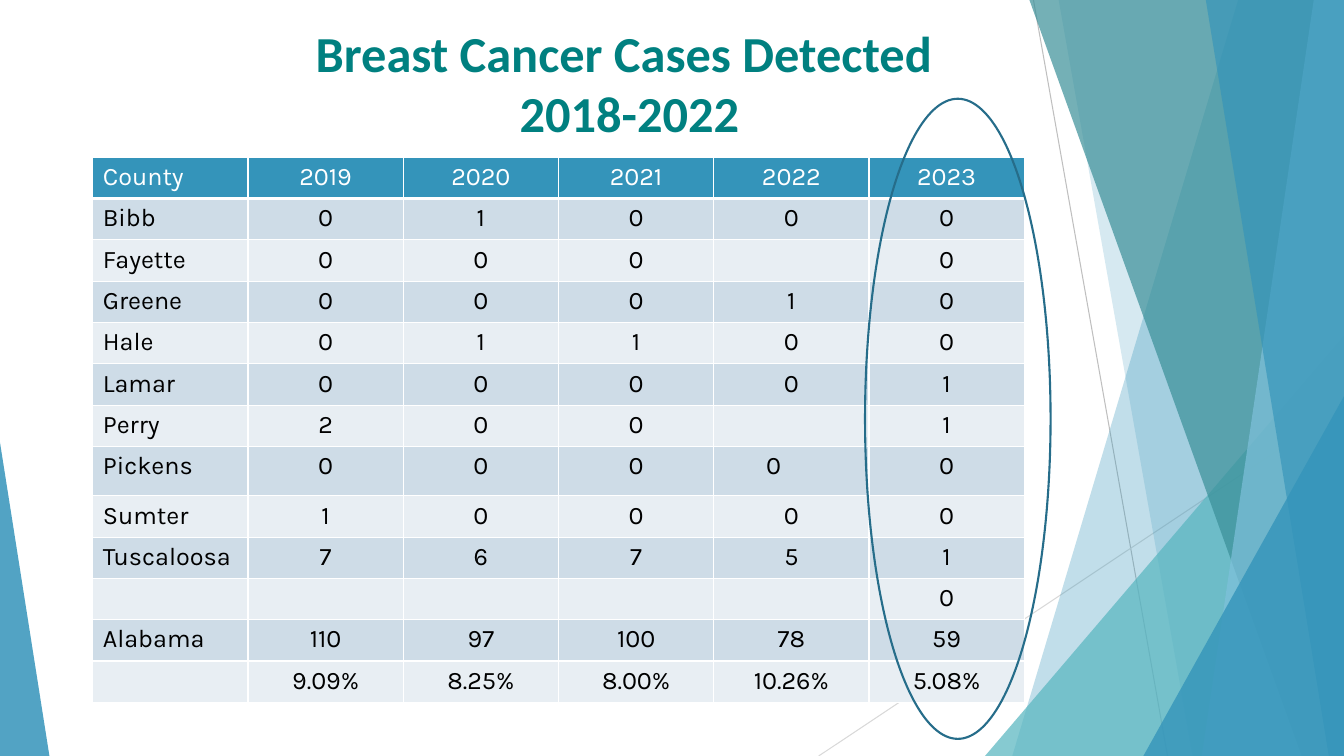
import lxml.etree
import pptx
import pptx.dml.color
import pptx.enum.shapes
import pptx.enum.text
import pptx.oxml.ns
import pptx.util

Inches = pptx.util.Inches
Pt = pptx.util.Pt
SHAPE = pptx.enum.shapes.MSO_SHAPE
ALIGN = pptx.enum.text.PP_ALIGN

THEME = {
    "title": {"name": "Calibri", "size": Pt(36), "bold": True, "color": "008080"},
    "header": {"name": "Karla", "size": Pt(18), "bold": False, "color": "FFFFFF"},
    "body": {"name": "Karla", "size": Pt(18), "bold": False, "color": "000000"},
    "header_fill": "3494BA",
    "bands": ("CEDCE7", "E8EEF3"),
    "grid": "FFFFFF",
    "ring": "266D8A",
}

TITLE = "Breast Cancer Cases Detected \n2018-2022"
CASES = [
    ("County", "2019", "2020", "2021", "2022", "2023"),
    ("Bibb", "0", "1", "0", "0", "0"),
    ("Fayette", "0", "0", "0", "", "0"),
    ("Greene", "0", "0", "0", "1", "0"),
    ("Hale", "0", "1", "1", "0", "0"),
    ("Lamar", "0", "0", "0", "0", "1"),
    ("Perry", "2", "0", "0", "", "1"),
    ("Pickens", "0", "0", "0", "0\t", "0"),
    ("Sumter", "1", "0", "0", "0", "0"),
    ("Tuscaloosa", "7", "6", "7", "5", "1"),
    ("", "", "", "", "", "0"),
    ("Alabama", "110", "97", "100", "78", "59"),
    ("", "9.09%", "8.25%", "8.00%", "10.26%", "5.08%"),
]
TITLE_BOX = (2.33, 0.17, 7.83, 1.5)
TABLE_AT = (0.92, 1.56)
COL_W, ROW_H, TALL_ROW_H = 1.54, 0.41, 0.49
RING_BOX = (8.58, 0.98, 1.84, 6.35)

W, H = 13.33, 7.5
RAYS = [
    ((10.25, 0), (11.58, H), "BFBFBF"),
    ((W, 4.03), (8.12, H), "D9D9D9"),
]
# kind, geometry, colour, opacity
FACETS = [
    ("band", (12.28, 10.04), "3494BA", 30),
    ("band", (10.5, 11.83), "3494BA", 20),
    ("triangle", (9.77, 3.33, 3.56, 1), "58B6C0", 72),
    ("band", (10.21, 12.91), "3A8F98", 70),
    ("band", (13.03, 11.92), "7FC1DB", 70),
    ("band", (11.96, 13.18), "3494BA", 65),
    ("triangle", (11.34, 3.93, 1.99, 1), "3494BA", 80),
    ("triangle", (0, 4.39, 0.49, 0), "3494BA", 85),
]


def rgb(color):
    return pptx.dml.color.RGBColor.from_string(color)


def sub(parent, tag, **attrs):
    return lxml.etree.SubElement(parent, pptx.oxml.ns.qn(tag), attrs)


def set_fill(obj, color):
    obj.fill.solid()
    obj.fill.fore_color.rgb = rgb(color)


def write(p, text, style, align):
    p.text = text
    p.alignment = align
    for r in p.runs:
        for key, value in style.items():
            if key == "color":
                r.font.color.rgb = rgb(value)
            else:
                setattr(r.font, key, value)


def add_ray(s, start, end, color):
    ends = [Inches(v) for v in start + end]
    line = s.shapes.add_connector(pptx.enum.shapes.MSO_CONNECTOR.STRAIGHT, *ends)
    line.line.color.rgb = rgb(color)
    line.line.width = Pt(0.75)
    sub(line._element.spPr, "a:effectLst")


def add_facet(s, kind, geometry, color, opacity):
    if kind == "band":
        top_x, bottom_x = geometry
        points = [(Inches(x), Inches(y)) for x, y in ((top_x, 0), (W, 0), (W, H), (bottom_x, H))]
        builder = s.shapes.build_freeform(*points[0], scale=1.0)
        builder.add_line_segments(points[1:], close=True)
        sp = builder.convert_to_shape()
    else:
        left, top, width, apex = geometry
        box = [Inches(v) for v in (left, top, width, H - top)]
        sp = s.shapes.add_shape(SHAPE.ISOSCELES_TRIANGLE, *box)
        sp.adjustments[0] = apex
    sp.shadow.inherit = False
    set_fill(sp, color)
    sub(sp.fill._xPr.solidFill[0], "a:alpha", val=str(opacity * 1000))
    sp.line.fill.background()


def add_borders(cell, row):
    widths = {"L": 1, "R": 1, "T": 3 if row == 1 else 1, "B": 3 if row == 0 else 1}
    for side, width in widths.items():
        line = sub(cell._tc.get_or_add_tcPr(), "a:ln" + side, w=str(Pt(width)))
        sub(sub(line, "a:solidFill"), "a:srgbClr", val=THEME["grid"])


def add_cases(s):
    n_rows, n_cols = len(CASES), len(CASES[0])
    size = (COL_W * n_cols, ROW_H * n_rows)
    table = s.shapes.add_table(n_rows, n_cols, *[Inches(v) for v in TABLE_AT + size]).table
    for column in table.columns:
        column.width = Inches(COL_W)
    for i, values in enumerate(CASES):
        table.rows[i].height = Inches(TALL_ROW_H if values[0] == "Pickens" else ROW_H)
        style = THEME["body"] if i else THEME["header"]
        color = THEME["bands"][(i - 1) % 2] if i else THEME["header_fill"]
        for j, value in enumerate(values):
            cell = table.cell(i, j)
            add_borders(cell, i)
            set_fill(cell, color)
            write(cell.text_frame.paragraphs[0], value, style, ALIGN.CENTER if j else ALIGN.LEFT)


def main():
    prs = pptx.Presentation()
    prs.slide_width, prs.slide_height = Inches(W), Inches(H)
    s = prs.slides.add_slide(prs.slide_layouts[6])
    for ray in RAYS:
        add_ray(s, *ray)
    for facet in FACETS:
        add_facet(s, *facet)

    tf = s.shapes.add_textbox(*[Inches(v) for v in TITLE_BOX]).text_frame
    tf.word_wrap = True
    write(tf.paragraphs[0], TITLE, THEME["title"], ALIGN.CENTER)

    add_cases(s)

    ring = s.shapes.add_shape(SHAPE.OVAL, *[Inches(v) for v in RING_BOX])
    ring.shadow.inherit = False
    ring.fill.background()
    ring.line.color.rgb = rgb(THEME["ring"])
    ring.line.width = Pt(1.5)
    prs.save("out.pptx")


if __name__ == "__main__":
    main()
